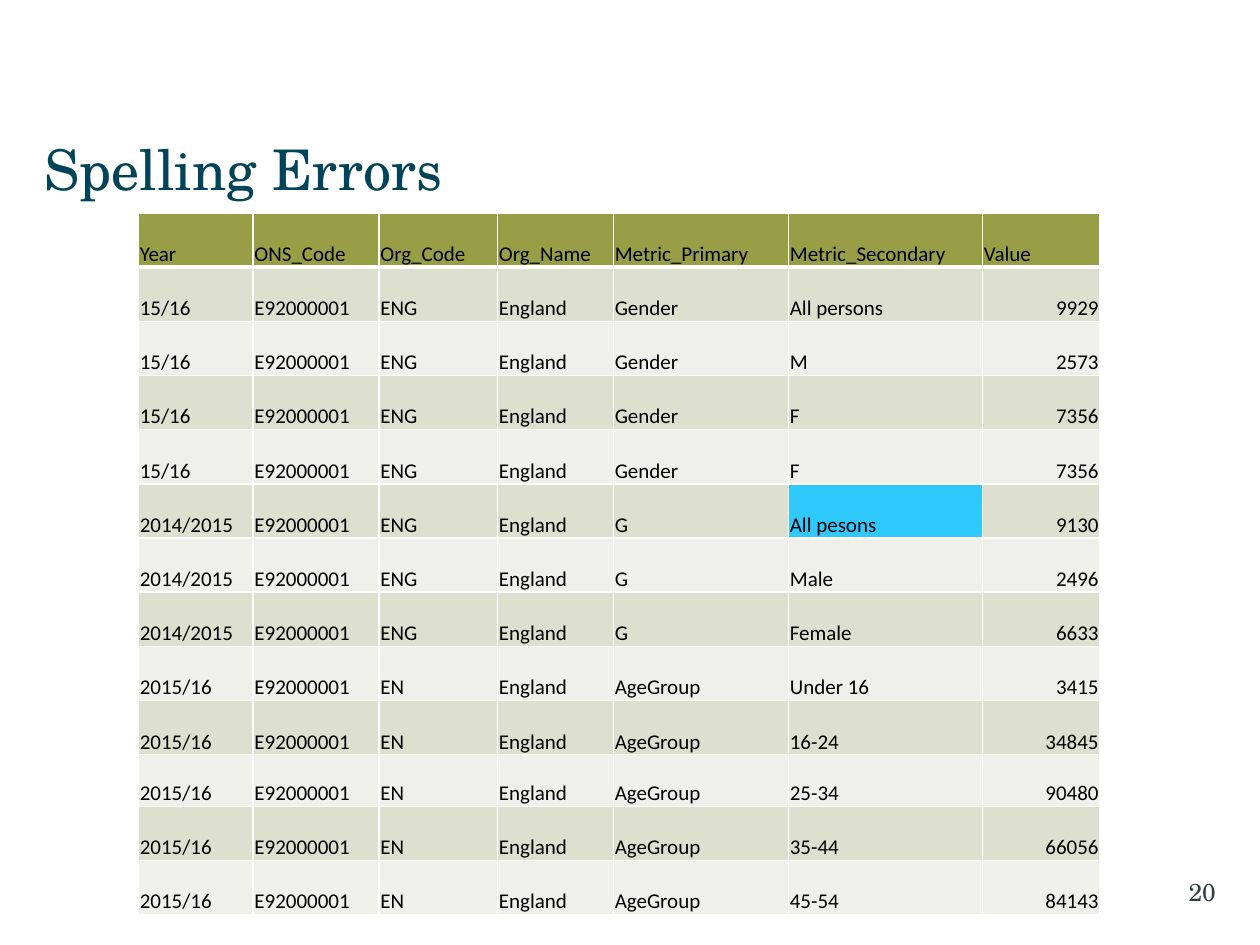
from lxml import etree
from pptx import Presentation
from pptx.dml.color import RGBColor
from pptx.enum.text import MSO_ANCHOR, PP_ALIGN
from pptx.oxml.ns import qn
from pptx.util import Inches, Pt

LEFT, RIGHT = PP_ALIGN.LEFT, PP_ALIGN.RIGHT
MIDDLE, BOTTOM = MSO_ANCHOR.MIDDLE, MSO_ANCHOR.BOTTOM

HEADERS = ["Year", "ONS_Code", "Org_Code", "Org_Name",
           "Metric_Primary", "Metric_Secondary", "Value"]
COLUMN_WIDTHS = [0.91, 1, 0.94, 0.92, 1.39, 1.54, 0.93]
ROW_HEIGHT = 0.43
SHORT_ROW, SHORT_ROW_HEIGHT = 10, 0.41
MISSPELLED = "All pesons"

# Year, organisation code and primary metric, with their secondary metrics and values
GROUPS = [
    ("15/16", "ENG", "Gender",
     [("All persons", 9929), ("M", 2573), ("F", 7356), ("F", 7356)]),
    ("2014/2015", "ENG", "G",
     [(MISSPELLED, 9130), ("Male", 2496), ("Female", 6633)]),
    ("2015/16", "EN", "AgeGroup",
     [("Under 16", 3415), ("16-24", 34845), ("25-34", 90480),
      ("35-44", 66056), ("45-54", 84143)]),
]


def rgb(hex_color):
    return RGBColor.from_string(hex_color)


class SlideBuilder:
    HEADING_FONT, TABLE_FONT = "TeX Gyre Schola", "Calibri"
    TITLE, NUMBER, BLACK, WHITE = "014359", "323D43", "000000", "FFFFFF"
    HEADER_FILL, HIGHLIGHT = "979E45", "2FC9FD"
    BANDS = ["EFF0E9", "DDDFCF"]

    def __init__(self, slide):
        self.slide = slide

    def add_styled_run(self, paragraph, text, size, font, color, align):
        paragraph.alignment = align
        run = paragraph.add_run()
        run.text = text
        for name, value in {"size": Pt(size), "name": font}.items():
            setattr(run.font, name, value)
        run.font.color.rgb = rgb(color)

    def add_text(self, text, box, margins, size, color, align):
        """Place one line; margins are left, top, right and bottom in inches."""
        frame = self.slide.shapes.add_textbox(*map(Inches, box)).text_frame
        left, top, right, bottom = map(Inches, margins)
        layout = {"word_wrap": True, "vertical_anchor": MIDDLE,
                  "margin_left": left, "margin_top": top,
                  "margin_right": right, "margin_bottom": bottom}
        for name, value in layout.items():
            setattr(frame, name, value)
        self.add_styled_run(frame.paragraphs[0], text, size,
                            self.HEADING_FONT, color, align)

    def add_borders(self, cell, widths):
        """Draw white borders; widths maps L, R, T and B to points."""
        properties = cell._tc.get_or_add_tcPr()
        for side, width in widths.items():
            line = etree.SubElement(properties, qn(f"a:ln{side}"), w=str(Pt(width)))
            fill = etree.SubElement(line, qn("a:solidFill"))
            etree.SubElement(fill, qn("a:srgbClr"), val=self.WHITE)

    def fill_cell(self, cell, text, row, align):
        layout = {"vertical_anchor": BOTTOM, "margin_left": Inches(0.01),
                  "margin_top": Inches(0.01), "margin_right": Inches(0.01),
                  "margin_bottom": 0}
        for name, value in layout.items():
            setattr(cell, name, value)
        self.add_borders(cell, {"L": 1, "R": 1, "T": 3 if row == 1 else 1,
                                "B": 3 if row == 0 else 1})
        color = self.HEADER_FILL if row == 0 else self.BANDS[row % 2]
        if text == MISSPELLED:
            color = self.HIGHLIGHT
        cell.fill.solid()
        cell.fill.fore_color.rgb = rgb(color)
        self.add_styled_run(cell.text_frame.paragraphs[0], text, 12,
                            self.TABLE_FONT, self.BLACK, align)

    def add_table(self, rows, box):
        table = self.slide.shapes.add_table(
            len(rows), len(COLUMN_WIDTHS), *map(Inches, box)).table
        for column, width in zip(table.columns, COLUMN_WIDTHS):
            column.width = Inches(width)
        for r, values in enumerate(rows):
            height = SHORT_ROW_HEIGHT if r == SHORT_ROW else ROW_HEIGHT
            table.rows[r].height = Inches(height)
            for c, value in enumerate(values):
                align = RIGHT if isinstance(value, int) else LEFT
                self.fill_cell(table.cell(r, c), str(value), r, align)


def main():
    presentation = Presentation()
    presentation.slide_width, presentation.slide_height = Inches(10), Inches(7.5)
    builder = SlideBuilder(
        presentation.slides.add_slide(presentation.slide_layouts[6]))

    records = [[year, "E92000001", code, "England", primary, secondary, value]
               for year, code, primary, metrics in GROUPS
               for secondary, value in metrics]
    builder.add_text("20", (7.73, 6.91, 1.92, 0.34), (0.1, 0.05, 0, 0.05),
                     14, builder.NUMBER, RIGHT)
    builder.add_table([HEADERS] + records, (1.1, 1.69, 7.63, 5.57))
    builder.add_text("Spelling Errors", (0.35, 0.98, 9.29, 0.71), (0, 0.05, 0.1, 0.05),
                     32, builder.TITLE, LEFT)
    presentation.save("out.pptx")


if __name__ == "__main__":
    main()
